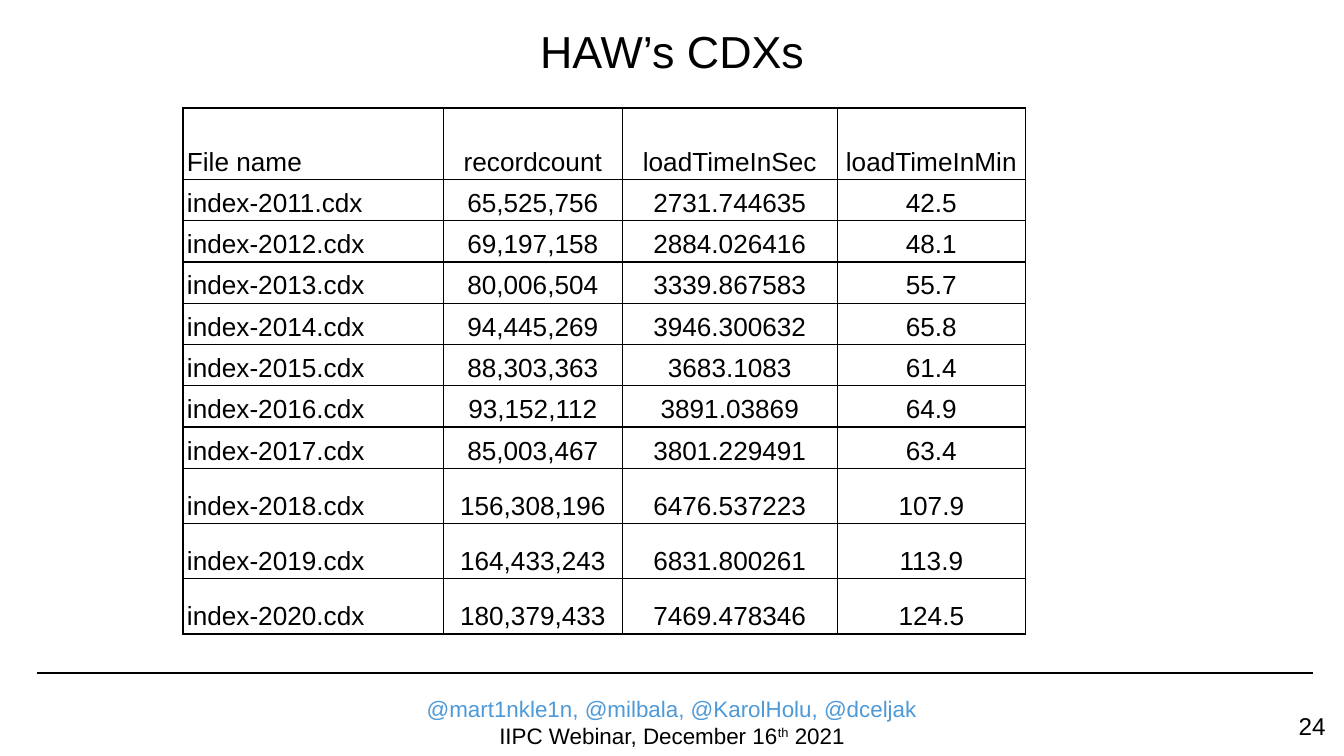
"""Build the slide with the load times of HAW's CDX files."""
from lxml.etree import SubElement
from pptx import Presentation
from pptx.dml.color import RGBColor as RGB
from pptx.enum.shapes import MSO_CONNECTOR as Link
from pptx.enum.text import MSO_ANCHOR as Anchor, PP_ALIGN as Align
from pptx.oxml.ns import qn
from pptx.util import Pt

BLACK = RGB(0x00, 0x00, 0x00)
BLUE = RGB(0x4E, 0x99, 0xD7)

ROWS = [
    ("File name", "recordcount", "loadTimeInSec", "loadTimeInMin"),
    ("index-2011.cdx", "65,525,756", "2731.744635", "42.5"),
    ("index-2012.cdx", "69,197,158", "2884.026416", "48.1"),
    ("index-2013.cdx", "80,006,504", "3339.867583", "55.7"),
    ("index-2014.cdx", "94,445,269", "3946.300632", "65.8"),
    ("index-2015.cdx", "88,303,363", "3683.1083", "61.4"),
    ("index-2016.cdx", "93,152,112", "3891.03869", "64.9"),
    ("index-2017.cdx", "85,003,467", "3801.229491", "63.4"),
    ("index-2018.cdx", "156,308,196", "6476.537223", "107.9"),
    ("index-2019.cdx", "164,433,243", "6831.800261", "113.9"),
    ("index-2020.cdx", "180,379,433", "7469.478346", "124.5"),
]
WIDTHS = [139.6, 95.8, 115.2, 100.8]
HEIGHTS = [38.2] + [18.8] * 7 + [29.6] * 3


def style(para, size, color=BLACK, align=Align.CENTER):
    para.alignment = align
    para.font.name = "Arial"
    para.font.size = Pt(size)
    para.font.color.rgb = color


def inset(frame, side, end):
    frame.margin_left = frame.margin_right = Pt(side)
    frame.margin_top = frame.margin_bottom = Pt(end)


deck = Presentation()
deck.slide_width, deck.slide_height = Pt(720), Pt(405)
slide = deck.slides.add_slide(deck.slide_layouts[5])
shapes = slide.shapes

rule = shapes.add_connector(Link.STRAIGHT, Pt(19.6), Pt(360.6), Pt(703.6), Pt(360.6))
rule.line.color.rgb = BLACK
rule.line.width = Pt(0.75)
SubElement(rule._element.spPr, qn("a:effectLst"))

foot = shapes.add_textbox(Pt(162), Pt(368.8), Pt(396), Pt(36)).text_frame
foot.word_wrap = True
inset(foot, 7.2, 3.6)
names = foot.paragraphs[0]
names.text = "@mart1nkle1n, @milbala, @KarolHolu, @dceljak"
style(names, 12, BLUE)
event = foot.add_paragraph()
for part in ("IIPC Webinar, December 16", "th", " 2021"):
    run = event.add_run()
    run.text = part
    if part == "th":
        run._r.get_or_add_rPr().set("baseline", "30000")
style(event, 12)

title = shapes.title
title.left, title.top, title.width, title.height = Pt(51), Pt(-0.6), Pt(618), Pt(55.4)
title.text = "HAW’s CDXs"
title.text_frame.vertical_anchor = Anchor.MIDDLE
inset(title.text_frame, 7.2, 2.2)
style(title.text_frame.paragraphs[0], 24)

page = shapes.add_textbox(Pt(674), Pt(373.8), Pt(43.2), Pt(31)).text_frame
page.word_wrap = True
inset(page, 7.2, 7.2)
page.text = "24"
style(page.paragraphs[0], 13, align=Align.RIGHT)

table = shapes.add_table(
    len(ROWS), len(WIDTHS), Pt(98), Pt(57.9), Pt(sum(WIDTHS)), Pt(sum(HEIGHTS))
).table
table.first_row = table.horz_banding = False
for col, width in zip(table.columns, WIDTHS):
    col.width = Pt(width)
for row, height, texts in zip(table.rows, HEIGHTS, ROWS):
    row.height = Pt(height)
    for i, (cell, text) in enumerate(zip(row.cells, texts)):
        cell.text = text
        cell.vertical_anchor = Anchor.BOTTOM
        inset(cell, 2.2, 1.4)
        para = cell.text_frame.paragraphs[0]
        para.line_spacing = 1.15
        style(para, 14, align=Align.CENTER if i else Align.LEFT)
        props = cell._tc.get_or_add_tcPr()
        for side in ("lnL", "lnR", "lnT", "lnB"):
            edge = SubElement(props, qn("a:" + side), w=str(Pt(0.75)))
            paint = SubElement(edge, qn("a:solidFill"))
            SubElement(paint, qn("a:srgbClr"), val=str(BLACK))
        cell.fill.background()

deck.save("out.pptx")
